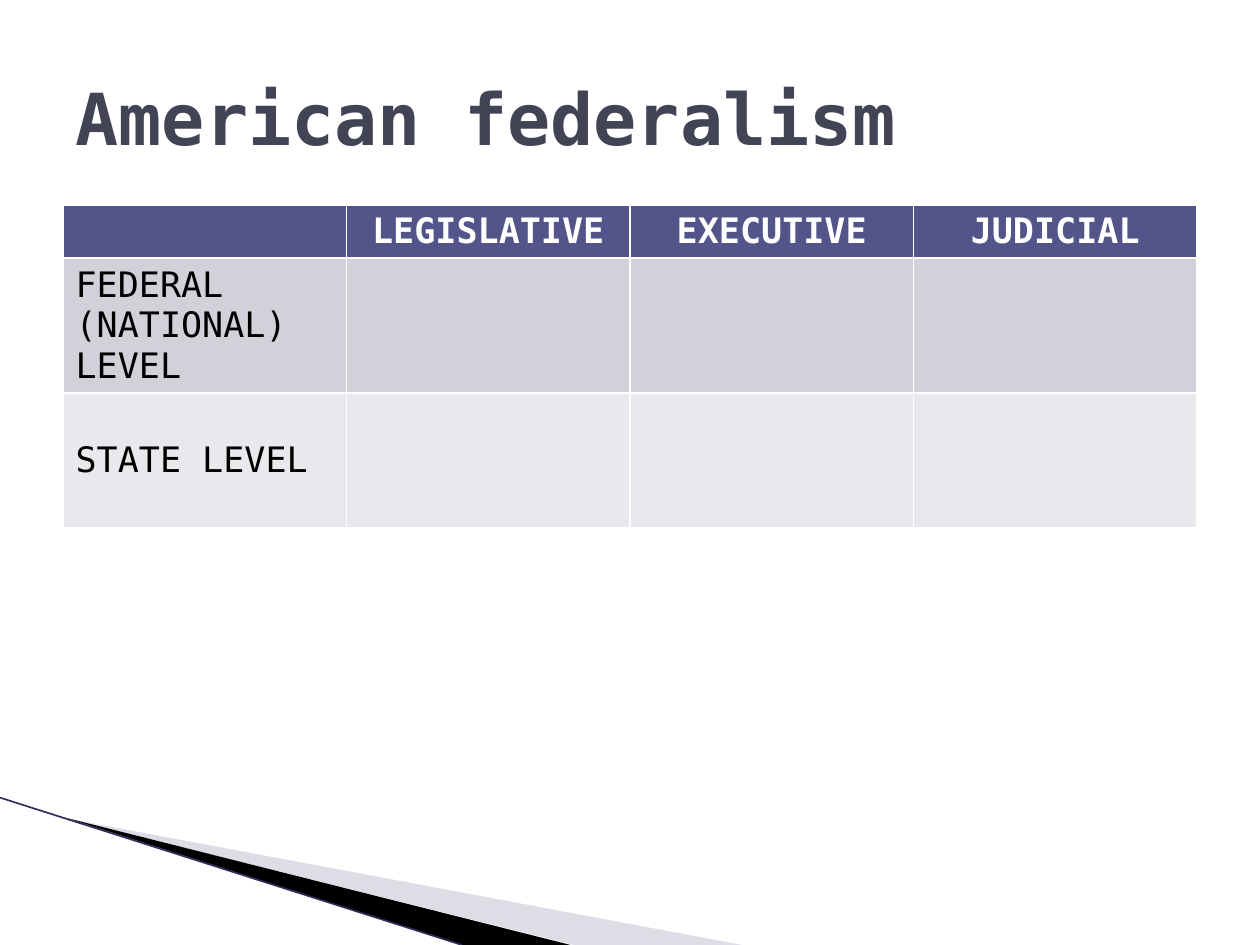
from dataclasses import dataclass

from lxml import etree
from pptx import Presentation
from pptx.dml.color import RGBColor
from pptx.enum.shapes import MSO_CONNECTOR
from pptx.enum.text import MSO_ANCHOR, PP_ALIGN
from pptx.oxml.ns import qn
from pptx.util import Pt

STRAIGHT = MSO_CONNECTOR.STRAIGHT
MIDDLE = MSO_ANCHOR.MIDDLE
LEFT, CENTER = PP_ALIGN.LEFT, PP_ALIGN.CENTER
TITLE_ONLY = 5


@dataclass(frozen=True)
class Theme:
    font: str = "DejaVu Sans Mono"
    title_size: float = 41
    table_size: float = 20
    title: str = "424456"
    header_fill: str = "53548A"
    header_text: str = "FFFFFF"
    body_text: str = "000000"
    band_fills: tuple = ("D1D1DA", "E9E9ED")
    pale_wedge: str = "AAAABF"
    dark_wedge: str = "000000"
    edge: str = "2F2F5A"


class SlideBuilder:
    def __init__(self, slide, theme):
        self.slide = slide
        self.theme = theme

    def style_text(self, paragraph, size, color, bold, alignment=LEFT):
        paragraph.alignment = alignment
        for run in paragraph.runs:
            run.font.name = self.theme.font
            run.font.size = Pt(size)
            run.font.bold = bold
            run.font.color.rgb = RGBColor.from_string(color)

    def title(self, text, left, top, width, height):
        shape = self.slide.shapes.title
        shape.left, shape.top = Pt(left), Pt(top)
        shape.width, shape.height = Pt(width), Pt(height)
        frame = shape.text_frame
        frame.text = text
        frame.vertical_anchor = MIDDLE
        self.style_text(frame.paragraphs[0], self.theme.title_size, self.theme.title, True)

    def wedge(self, points, color, opacity=100):
        """Draw a borderless polygon; opacity is in percent."""
        corners = [(Pt(x), Pt(y)) for x, y in points]
        builder = self.slide.shapes.build_freeform(*corners[0])
        builder.add_line_segments(corners[1:], close=True)
        shape = builder.convert_to_shape()
        shape.shadow.inherit = False
        shape.fill.solid()
        shape.fill.fore_color.rgb = RGBColor.from_string(color)
        shape.line.fill.background()
        if opacity < 100:
            color_element = shape.fill._xPr.find(".//" + qn("a:srgbClr"))
            etree.SubElement(color_element, qn("a:alpha"), val=str(opacity * 1000))

    def line(self, start, end, color, width):
        connector = self.slide.shapes.add_connector(
            STRAIGHT, *(Pt(value) for value in (*start, *end)))
        connector.line.color.rgb = RGBColor.from_string(color)
        connector.line.width = Pt(width)
        etree.SubElement(connector._element.spPr, qn("a:effectLst"))

    def table(self, rows, left, top, width, row_heights):
        """Add a table with a header row, banded body rows and equal columns."""
        theme = self.theme
        table = self.slide.shapes.add_table(
            len(rows), len(rows[0]), Pt(left), Pt(top), Pt(width), Pt(sum(row_heights))).table
        for row_index, (texts, height) in enumerate(zip(rows, row_heights)):
            table.rows[row_index].height = Pt(height)
            is_header = row_index == 0
            fill = theme.header_fill if is_header else theme.band_fills[(row_index - 1) % 2]
            color = theme.header_text if is_header else theme.body_text
            alignment = CENTER if is_header else LEFT
            for column_index, text in enumerate(texts):
                cell = table.cell(row_index, column_index)
                cell.fill.solid()
                cell.fill.fore_color.rgb = RGBColor.from_string(fill)
                cell.vertical_anchor = MIDDLE
                cell.text_frame.text = text
                self.style_text(cell.text_frame.paragraphs[0], theme.table_size,
                                color, is_header, alignment)


def main():
    presentation = Presentation()
    presentation.slide_width, presentation.slide_height = Pt(720), Pt(540)
    theme = Theme()
    slide = presentation.slides.add_slide(presentation.slide_layouts[TITLE_ONLY])
    builder = SlideBuilder(slide, theme)

    builder.wedge([(39.6, 468), (424, 540), (328, 540)], theme.pale_wedge, opacity=40)
    builder.wedge([(38.2, 467.5), (326, 540), (264, 540)], theme.dark_wedge)
    builder.line((0, 455.8), (264, 540), theme.edge, 0.95)
    builder.table(
        [["", "LEGISLATIVE", "EXECUTIVE", "JUDICIAL"],
         ["FEDERAL (NATIONAL) LEVEL", "", "", ""],
         ["STATE LEVEL", "", "", ""]],
        left=36, top=117, width=648, row_heights=[30, 77, 77])
    builder.title("American federalism", left=36, top=21.6, width=648, height=90)

    presentation.save("out.pptx")


if __name__ == "__main__":
    main()
